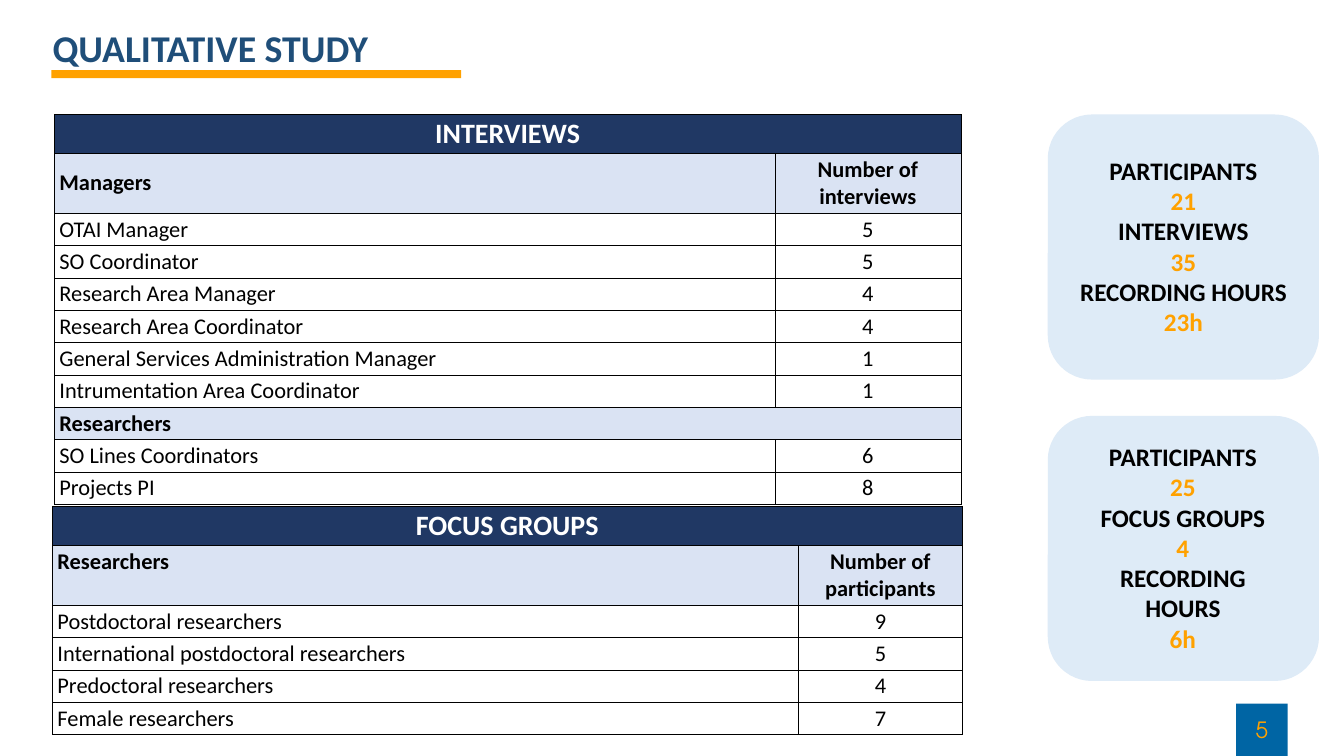
"""Builds the qualitative study slide with its two tables and two summary panels."""
from lxml import etree
from pptx import Presentation
from pptx import util as u
from pptx.dml import color
from pptx.enum import shapes, text
from pptx.oxml import ns

NAVY, PALE, PANEL, ORANGE = "203864", "DAE3F3", "DEEBF7", "FFA100"
BLUE, TITLE, BLACK, WHITE = "0065A4", "1F4E79", "000000", "FFFFFF"
LEFT, CENTER = text.PP_ALIGN.LEFT, text.PP_ALIGN.CENTER
TOP, MIDDLE = text.MSO_ANCHOR.TOP, text.MSO_ANCHOR.MIDDLE

TABLES = [
    {"at": (2.74, 5.77), "columns": (36.32, 9.37), "anchor": MIDDLE, "rows": [
        ("INTERVIEWS",),
        ("Managers", "Number of interviews"),
        ("OTAI Manager", "5"),
        ("SO Coordinator", "5"),
        ("Research Area Manager", "4"),
        ("Research Area Coordinator", "4"),
        ("General Services Administration Manager", "1"),
        ("Intrumentation Area Coordinator", "1"),
        ("Researchers",),
        ("SO Lines Coordinators", "6"),
        ("Projects PI", "8"),
    ]},
    {"at": (2.64, 25.53), "columns": (37.62, 8.23), "anchor": TOP, "rows": [
        ("FOCUS GROUPS",),
        ("Researchers", "Number of participants"),
        ("Postdoctoral researchers", "9"),
        ("International postdoctoral researchers", "5"),
        ("Predoctoral researchers", "4"),
        ("Female researchers", "7"),
    ]},
]
PANELS = [
    {"top": 5.77, "text_at": (53.49, 7.7, 12.32, 9.5), "facts": [
        ("PARTICIPANTS", "21"), ("INTERVIEWS", "35"), ("RECORDING HOURS", "23h")]},
    {"top": 20.96, "text_at": (54.25, 22.12, 10.74, 11.02), "facts": [
        ("PARTICIPANTS", "25"), ("FOCUS GROUPS", "4"), ("RECORDING HOURS", "6h")]},
]
HEADER_HEIGHT, LABEL_HEIGHT, ROW_HEIGHT = 1.96, 3.02, 1.63


def rgb(value):
    return color.RGBColor.from_string(value)


def write(para, words, *, size, ink=BLACK, bold=False, align=LEFT, font="Calibri"):
    para.alignment = align
    span = para.add_run()
    span.text = words
    span.font.name, span.font.size, span.font.bold = font, u.Pt(size), bold
    span.font.color.rgb = rgb(ink)


def add_block(page, kind, at, fill):
    block = page.shapes.add_shape(kind, *map(u.Cm, at))
    block.shadow.inherit = False
    block.fill.solid()
    block.fill.fore_color.rgb = rgb(fill)
    block.line.fill.background()
    return block


def add_text_box(page, at):
    box = page.shapes.add_textbox(*map(u.Cm, at))
    box.text_frame.word_wrap = True
    return box.text_frame


def add_borders(cell):
    properties = cell._tc.get_or_add_tcPr()
    for place, side in enumerate(("a:lnL", "a:lnR", "a:lnT", "a:lnB")):
        line = etree.Element(ns.qn(side), w=str(u.Pt(1)))
        fill = etree.SubElement(line, ns.qn("a:solidFill"))
        etree.SubElement(fill, ns.qn("a:srgbClr"), val=BLACK)
        properties.insert(place, line)


def add_grid(page, at, columns, anchor, rows):
    heights = [HEADER_HEIGHT, LABEL_HEIGHT] + [ROW_HEIGHT] * (len(rows) - 2)
    size = sum(columns), sum(heights)
    table = page.shapes.add_table(len(rows), len(columns), *map(u.Cm, at + size)).table
    table.first_row = table.horz_banding = False
    for column, width in zip(table.columns, columns):
        column.width = u.Cm(width)
    for index, (row, height, words) in enumerate(zip(table.rows, heights, rows)):
        row.height = u.Cm(height)
        header, heading = index == 0, index == 1 or len(words) == 1
        if len(words) == 1:
            row.cells[0].merge(row.cells[1])
        for cell in row.cells:
            cell.fill.solid()
            cell.fill.fore_color.rgb = rgb(NAVY if header else PALE if heading else WHITE)
            cell.vertical_anchor = anchor
            add_borders(cell)
        for position, label in enumerate(words):
            write(row.cells[position].text_frame.paragraphs[0], label,
                  size=40 if header else 32, ink=WHITE if header else BLACK,
                  bold=heading, align=CENTER if header or position else LEFT)


def add_panel(page, top, text_at, facts):
    add_block(page, shapes.MSO_SHAPE.ROUNDED_RECTANGLE, (52.81, top, 13.67, 13.36), PANEL)
    frame = add_text_box(page, text_at)
    lines = [line for name, value in facts for line in ((name, BLACK), (value, ORANGE))]
    for index, (words, ink) in enumerate(lines):
        para = frame.add_paragraph() if index else frame.paragraphs[0]
        write(para, words, size=36, ink=ink, bold=True, align=CENTER)


def add_title(page):
    frame = add_text_box(page, (1.96, -0.28, 38.96, 5.66))
    frame.vertical_anchor = MIDDLE
    frame.margin_left = frame.margin_right = frame.margin_top = frame.margin_bottom = u.Cm(0.69)
    frame.paragraphs[0].line_spacing = 0.9
    write(frame.paragraphs[0], "QUALITATIVE STUDY", size=54, ink=TITLE, bold=True)
    add_block(page, shapes.MSO_SHAPE.RECTANGLE, (2.59, 3.53, 20.65, 0.41), ORANGE)


def add_page_number(page):
    badge = add_block(page, shapes.MSO_SHAPE.RECTANGLE, (62.31, 35.46, 2.59, 2.64), BLUE)
    badge.text_frame.vertical_anchor = MIDDLE
    write(badge.text_frame.paragraphs[0], "5", size=32, ink=ORANGE, align=CENTER,
          font="TeX Gyre Adventor")


def main():
    deck = Presentation()
    deck.slide_width, deck.slide_height = u.Cm(67.74), u.Cm(38.1)
    page = deck.slides.add_slide(deck.slide_layouts[6])
    add_title(page)
    for table in TABLES:
        add_grid(page, **table)
    for panel in PANELS:
        add_panel(page, **panel)
    add_page_number(page)
    deck.save("out.pptx")


if __name__ == "__main__":
    main()
